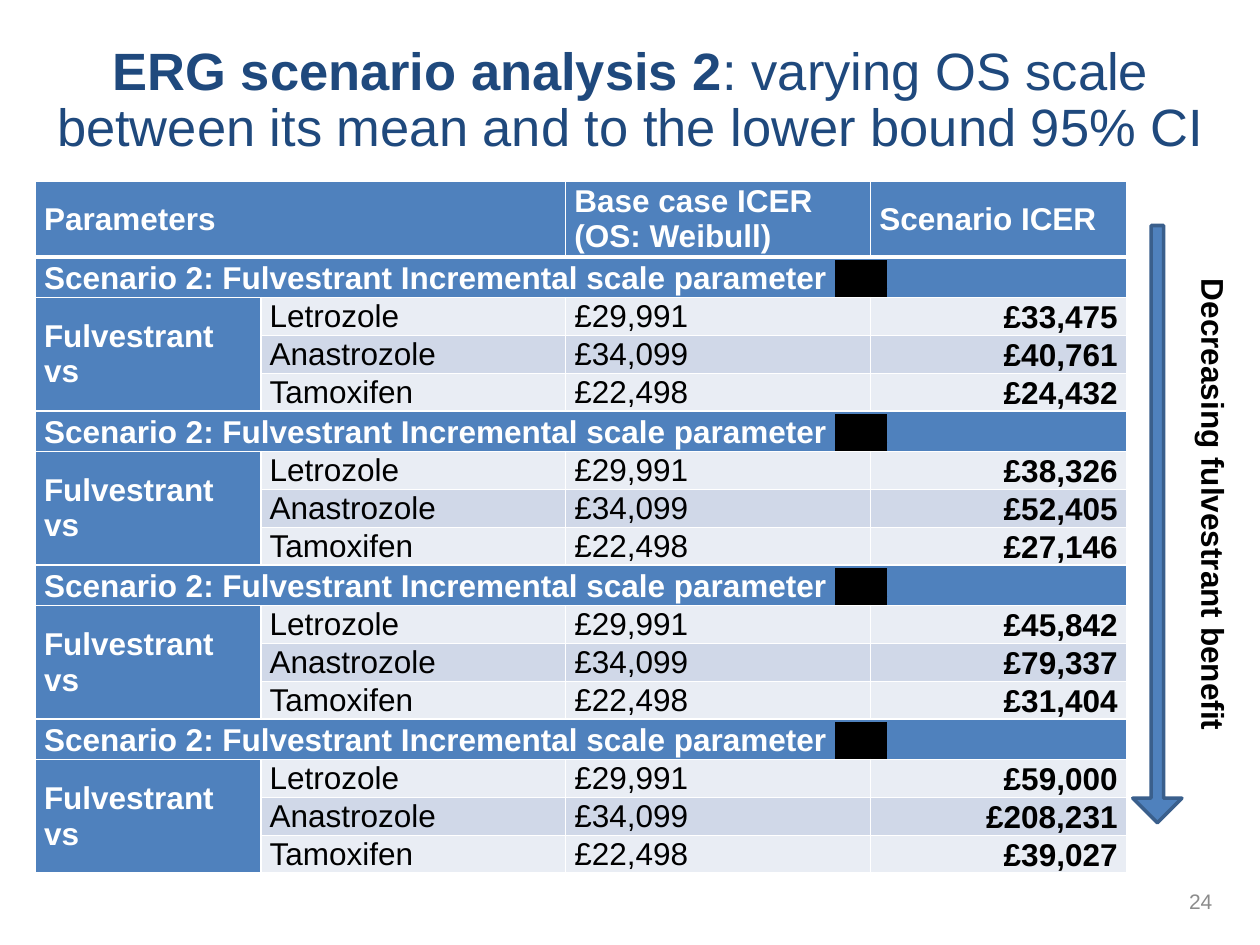
from dataclasses import dataclass

from lxml import etree
from pptx import Presentation
from pptx.dml.color import RGBColor
from pptx.enum import shapes, text
from pptx.oxml import ns
from pptx.util import Inches, Pt


@dataclass(frozen=True)
class Theme:
    """Colours, fonts and type sizes of the deck."""
    navy: str = "1F497D"
    blue: str = "4F81BD"
    outline: str = "3A5F8C"
    light: str = "E9EDF4"
    band: str = "D0D8E8"
    white: str = "FFFFFF"
    black: str = "000000"
    grey: str = "8C8C8C"
    font: str = "Arial"
    redacted_font: str = "Calibri"
    title: int = 30
    body: int = 18
    number: int = 12


THEME = Theme()
COLUMNS = (1.79, 2.42, 2.42, 2.03)
HEADER_HEIGHT, ROW_HEIGHT = 0.59, 0.3
BASE_CASE = (("Letrozole", "£29,991"), ("Anastrozole", "£34,099"), ("Tamoxifen", "£22,498"))
SCENARIOS = (
    ("£33,475", "£40,761", "£24,432"),
    ("£38,326", "£52,405", "£27,146"),
    ("£45,842", "£79,337", "£31,404"),
    ("£59,000", "£208,231", "£39,027"),
)


def add_span(para, words, size, color, bold=False, font=THEME.font):
    """Add one formatted run to a paragraph."""
    span = para.add_run()
    span.text = words
    span.font.size = Pt(size)
    span.font.bold = bold
    span.font.name = font
    span.font.color.rgb = RGBColor.from_string(color)
    return span


def add_color(parent, tag, color):
    """Add an element holding one RGB colour."""
    holder = etree.SubElement(parent, ns.qn(tag))
    etree.SubElement(holder, ns.qn("a:srgbClr"), val=color)
    return holder


def redact(span):
    """Highlight a run in black."""
    props = span.font._element
    props.find(ns.qn("a:solidFill")).addnext(add_color(props, "a:highlight", THEME.black))


def set_borders(cell, bottom):
    """Draw white borders round a cell."""
    props = cell._tc.get_or_add_tcPr()
    widths = {"a:lnL": 1, "a:lnR": 1, "a:lnT": 1, "a:lnB": bottom}
    for place, (tag, width) in enumerate(widths.items()):
        line = etree.Element(ns.qn(tag), w=str(Pt(width)))
        add_color(line, "a:solidFill", THEME.white)
        props.insert(place, line)


def fill_cell(cell, words, fill, color=THEME.white, bold=True,
              anchor=text.MSO_ANCHOR.MIDDLE, align=None):
    """Write and format one cell, and return its paragraph."""
    cell.margin_left = cell.margin_right = Inches(0.07)
    cell.margin_top = cell.margin_bottom = 0
    cell.vertical_anchor = anchor
    cell.fill.solid()
    cell.fill.fore_color.rgb = RGBColor.from_string(fill)
    para = cell.text_frame.paragraphs[0]
    para.alignment = align
    add_span(para, words, THEME.body, color, bold)
    return para


def place_title(page, box):
    """Fill the title placeholder."""
    title = page.shapes.title
    title.left, title.top, title.width, title.height = box
    frame = title.text_frame
    frame.word_wrap = True
    frame.auto_size = text.MSO_AUTO_SIZE.NONE
    frame.vertical_anchor = text.MSO_ANCHOR.MIDDLE
    para = frame.paragraphs[0]
    para.alignment = text.PP_ALIGN.CENTER
    para.line_spacing = 0.9
    add_span(para, "ERG scenario analysis 2", THEME.title, THEME.navy, True)
    add_span(para, ": varying OS scale between its mean and to the lower bound 95% CI",
             THEME.title, THEME.navy)


def fill_scenario(table, top, results):
    """Fill the heading row and comparator rows of one scenario."""
    table.cell(top, 0).merge(table.cell(top, 3))
    para = fill_cell(table.cell(top, 0),
                     "Scenario 2: Fulvestrant Incremental scale parameter ", THEME.blue)
    para.line_spacing = 1.07
    para.space_after = Pt(8)
    redact(add_span(para, "XXX", THEME.body, THEME.black, True, THEME.redacted_font))

    table.cell(top + 1, 0).merge(table.cell(top + len(results), 0))
    fill_cell(table.cell(top + 1, 0), "Fulvestrant vs", THEME.blue)
    for offset, ((drug, base), result) in enumerate(zip(BASE_CASE, results)):
        row = top + 1 + offset
        fill = THEME.band if offset % 2 else THEME.light
        fill_cell(table.cell(row, 1), drug, fill, THEME.black, False)
        fill_cell(table.cell(row, 2), base, fill, THEME.black, False)
        fill_cell(table.cell(row, 3), result, fill, THEME.black, True,
                  text.MSO_ANCHOR.BOTTOM, text.PP_ALIGN.RIGHT)


def place_table(page, box):
    """Place the table of ICERs by scenario."""
    block = len(BASE_CASE) + 1
    rows = 1 + block * len(SCENARIOS)
    table = page.shapes.add_table(rows, len(COLUMNS), *box).table
    for column, width in zip(table.columns, COLUMNS):
        column.width = Inches(width)
    for index, row in enumerate(table.rows):
        row.height = Inches(ROW_HEIGHT if index else HEADER_HEIGHT)
        for cell in row.cells:
            set_borders(cell, 1 if index else 3)

    table.cell(0, 0).merge(table.cell(0, 1))
    headings = {0: "Parameters", 2: "Base case ICER (OS: Weibull)", 3: "Scenario ICER"}
    for column, heading in headings.items():
        fill_cell(table.cell(0, column), heading, THEME.blue)
    for index, results in enumerate(SCENARIOS):
        fill_scenario(table, 1 + index * block, results)


def place_arrow(page, box):
    """Place the downward arrow beside the table."""
    arrow = page.shapes.add_shape(shapes.MSO_SHAPE.DOWN_ARROW, *box)
    arrow.adjustments[0] = 0.255
    arrow.adjustments[1] = 0.5
    arrow.shadow.inherit = False
    arrow.fill.solid()
    arrow.fill.fore_color.rgb = RGBColor.from_string(THEME.blue)
    arrow.line.color.rgb = RGBColor.from_string(THEME.outline)
    arrow.line.width = Pt(2)


def place_label(page, box, words, size, color, bold=False, align=None, rotation=0):
    """Place a one-line text box."""
    label = page.shapes.add_textbox(*box)
    label.rotation = rotation
    frame = label.text_frame
    frame.word_wrap = True
    frame.vertical_anchor = text.MSO_ANCHOR.MIDDLE
    para = frame.paragraphs[0]
    para.alignment = align
    add_span(para, words, size, color, bold)


def inches(*lengths):
    """Turn a box in inches into lengths."""
    return tuple(Inches(length) for length in lengths)


def main():
    """Build and save the deck."""
    deck = Presentation()
    deck.slide_width, deck.slide_height = inches(10, 7.5)
    page = deck.slides.add_slide(deck.slide_layouts.get_by_name("Title Only"))
    place_title(page, inches(0.28, 0.29, 9.45, 1.03))
    place_label(page, inches(7.47, 6.95, 2.25, 0.4), "24", THEME.number, THEME.grey,
                align=text.PP_ALIGN.RIGHT)
    place_arrow(page, inches(8.99, 1.79, 0.39, 4.74))
    place_label(page, inches(7.59, 3.96, 4.09, 0.4), "Decreasing fulvestrant benefit",
                THEME.body, THEME.black, True, rotation=90)
    place_table(page, inches(0.28, 1.44, 8.66, 5.48))
    deck.save("out.pptx")


if __name__ == "__main__":
    main()
